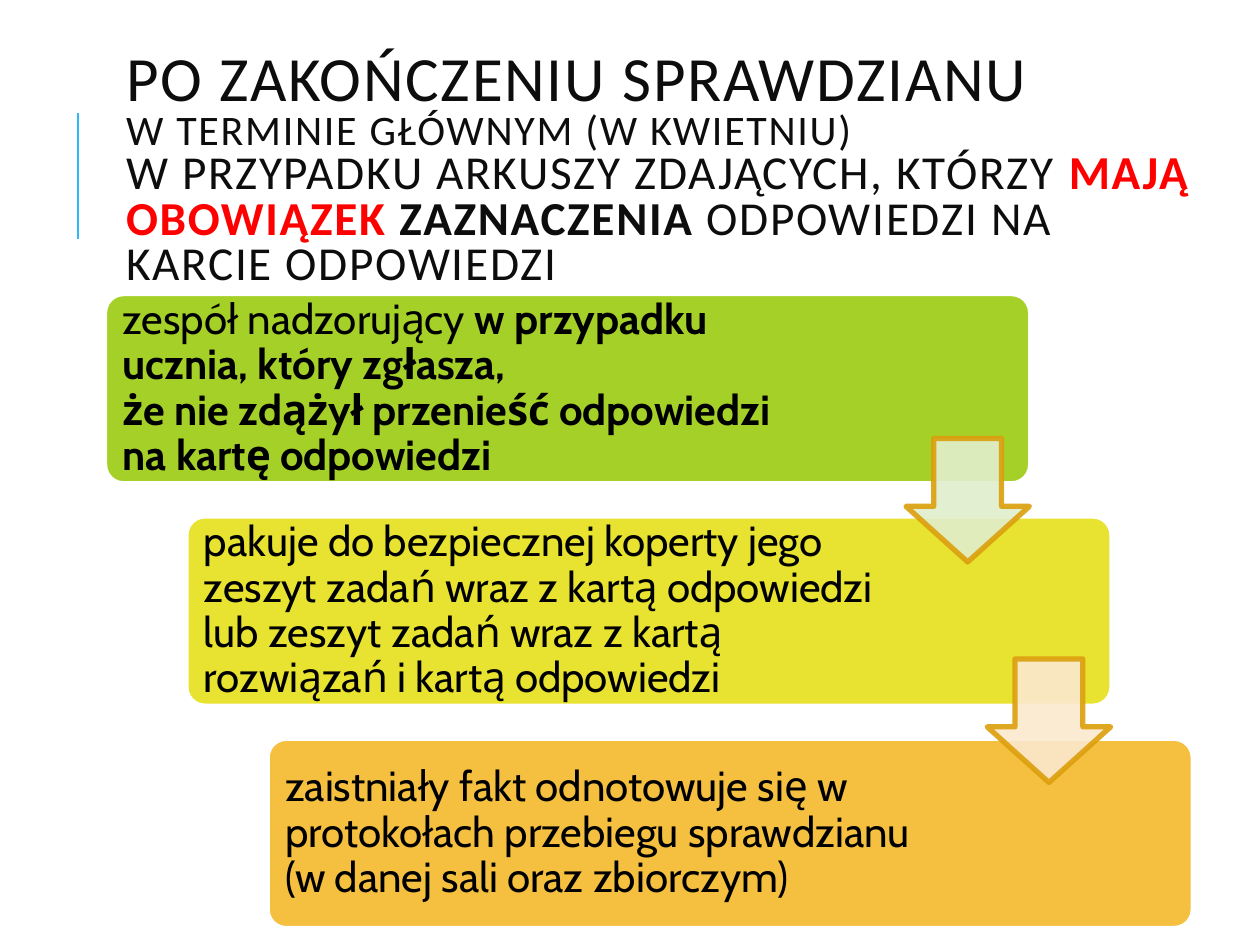
from lxml.etree import SubElement
from pptx import Presentation
from pptx.dml.color import RGBColor
from pptx.enum.shapes import MSO_CONNECTOR, MSO_SHAPE
from pptx.enum.text import MSO_ANCHOR, MSO_AUTO_SIZE, PP_ALIGN
from pptx.oxml.ns import qn
from pptx.util import Inches, Pt

THEME = {
    "title_font": "Calibri", "body_font": "Cabin",
    "title_color": "0D0D0D", "body_color": "000000", "alert": "FF0000",
    "accent": "31B6FD", "box_line": "FFFFFF", "arrow_line": "DC9F0C",
    "large": 36, "medium": 27, "small": 24,
    "accent_width": 1.5, "outline_width": 3, "arrow_opacity": 90,
}

TITLE = [
    ("PO ZAKOŃCZENIU SPRAWDZIANU\n", "large", False, "title_color"),
    ("W TERMINIE GŁÓWNYM (W KWIETNIU) \n", "small", False, "title_color"),
    ("W PRZYPADKU ARKUSZY ZDAJĄCYCH, KTÓRZY ", "medium", False, "title_color"),
    ("MAJĄ OBOWIĄZEK", "medium", True, "alert"),
    (" ZAZNACZENIA", "medium", True, "title_color"),
    (" ODPOWIEDZI NA KARCIE ODPOWIEDZI", "medium", False, "title_color"),
]

STEPS = [
    ("A5D028", 5.72, [
        ("zespół nadzorujący ", False),
        ("w przypadku ucznia, który zgłasza, \n"
         "że nie zdążył przenieść odpowiedzi na kartę odpowiedzi", True)]),
    ("E7E330", 5.63, [
        ("pakuje do bezpiecznej koperty jego zeszyt zadań wraz z kartą odpowiedzi "
         "lub zeszyt zadań wraz z kartą rozwiązań i kartą odpowiedzi", False)]),
    ("F5C040", 5.63, [
        ("zaistniały fakt odnotowuje się w protokołach przebiegu sprawdzianu \n"
         "(w danej sali oraz zbiorczym)", False)]),
]
ARROW_FILLS = ["E1EECD", "FBE9CF"]

BOX_LEFT, BOX_TOP, BOX_WIDTH, BOX_HEIGHT = 0.83, 2.33, 7.35, 1.51
STEP_X, STEP_Y = 0.645, 1.765
TEXT_INSET = 0.045
ARROW_LEFT, ARROW_TOP, ARROW_SIZE, ARROW_STEP_Y = 7.19, 3.48, 0.98, 1.75


def color(value):
    return RGBColor.from_string(value)


def add_runs(paragraph, text, size, bold, font_name, font_color, spacing=None):
    for index, part in enumerate(text.split("\n")):
        if index:
            paragraph.add_line_break()
        if not part:
            continue
        run = paragraph.add_run()
        run.text = part
        run.font.name = font_name
        run.font.size = Pt(size)
        run.font.bold = bold
        run.font.color.rgb = color(font_color)
        if spacing:
            run.font._element.set("spc", str(spacing))


def add_shape(slide, kind, left, top, width, height, adjustments, fill, line):
    shape = slide.shapes.add_shape(
        kind, Inches(left), Inches(top), Inches(width), Inches(height))
    for index, value in enumerate(adjustments):
        shape.adjustments[index] = value
    shape.shadow.inherit = False
    shape.fill.solid()
    shape.fill.fore_color.rgb = color(fill)
    shape.line.color.rgb = color(line)
    shape.line.width = Pt(THEME["outline_width"])
    return shape


def set_opacity(shape, percent):
    for element in shape._element.spPr.iter(qn("a:srgbClr")):
        SubElement(element, qn("a:alpha"), val=str(percent * 1000))


def add_title(slide):
    title = slide.shapes.title
    title.left, title.top = Inches(0.9), Inches(0.44)
    title.width, title.height = Inches(8.81), Inches(1.84)
    frame = title.text_frame
    frame.word_wrap = True
    frame.auto_size = MSO_AUTO_SIZE.NONE
    frame.vertical_anchor = MSO_ANCHOR.MIDDLE
    paragraph = frame.paragraphs[0]
    paragraph.alignment = PP_ALIGN.LEFT
    paragraph.line_spacing = 0.8
    paragraph.font.size = Pt(THEME["small"])
    for text, size, bold, font_color in TITLE:
        add_runs(paragraph, text, THEME[size], bold,
                 THEME["title_font"], THEME[font_color], 100)


def add_accent(slide):
    accent = slide.shapes.add_connector(
        MSO_CONNECTOR.STRAIGHT, Inches(0.62), Inches(1.9), Inches(0.62), Inches(0.9))
    accent.line.color.rgb = color(THEME["accent"])
    accent.line.width = Pt(THEME["accent_width"])
    SubElement(accent._element.spPr, qn("a:effectLst"))


def add_step(slide, index, fill, text_width, runs):
    left, top = BOX_LEFT + index * STEP_X, BOX_TOP + index * STEP_Y
    add_shape(slide, MSO_SHAPE.ROUNDED_RECTANGLE, left, top, BOX_WIDTH, BOX_HEIGHT,
              [0.1], fill, THEME["box_line"])
    text_box = slide.shapes.add_textbox(
        Inches(left + TEXT_INSET), Inches(top + TEXT_INSET),
        Inches(text_width), Inches(BOX_HEIGHT - 2 * TEXT_INSET))
    frame = text_box.text_frame
    frame.word_wrap = True
    frame.vertical_anchor = MSO_ANCHOR.MIDDLE
    frame.margin_left = frame.margin_right = Inches(0.1)
    frame.margin_top = frame.margin_bottom = Inches(0.1)
    paragraph = frame.paragraphs[0]
    paragraph.line_spacing = 0.9
    paragraph.font.size = Pt(THEME["small"])
    for text, bold in runs:
        add_runs(paragraph, text, THEME["small"], bold,
                 THEME["body_font"], THEME["body_color"])


def main():
    presentation = Presentation()
    presentation.slide_width, presentation.slide_height = Inches(10), Inches(7.5)
    slide = presentation.slides.add_slide(presentation.slide_layouts[5])
    add_accent(slide)
    add_title(slide)
    for index, step in enumerate(STEPS):
        add_step(slide, index, *step)
    for index, fill in enumerate(ARROW_FILLS):
        arrow = add_shape(
            slide, MSO_SHAPE.DOWN_ARROW, ARROW_LEFT + index * STEP_X,
            ARROW_TOP + index * ARROW_STEP_Y, ARROW_SIZE, ARROW_SIZE,
            [0.55, 0.45], fill, THEME["arrow_line"])
        set_opacity(arrow, THEME["arrow_opacity"])
    presentation.save("out.pptx")


if __name__ == "__main__":
    main()
